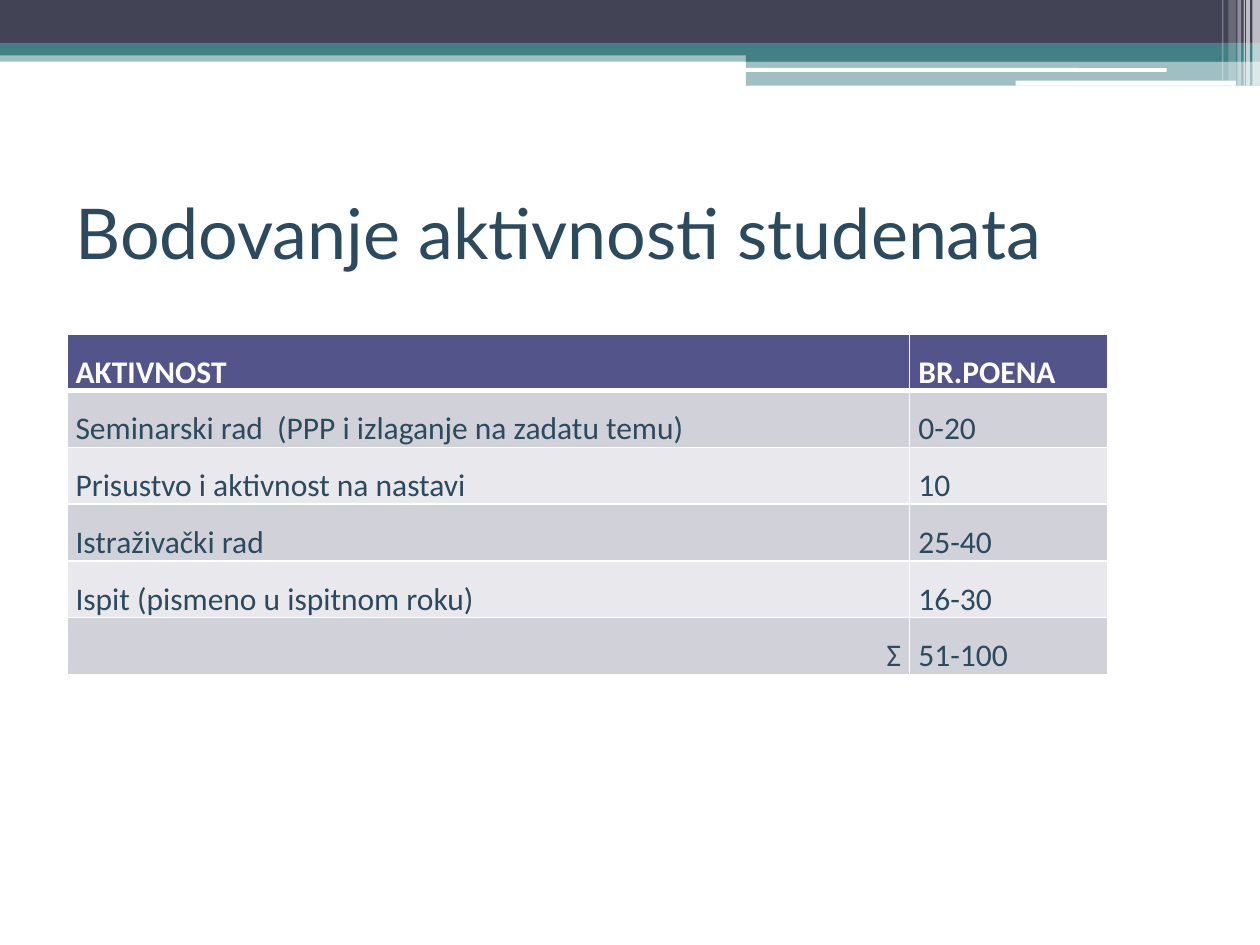
from lxml.etree import SubElement
from pptx import Presentation
from pptx.dml.color import RGBColor
from pptx.enum.shapes import MSO_SHAPE
from pptx.enum.text import MSO_ANCHOR, PP_ALIGN
from pptx.oxml.ns import qn
from pptx.util import Inches, Pt

# Content
TITLE = "Bodovanje aktivnosti studenata"
ROWS = [
    ("AKTIVNOST", "BR.POENA"),
    ("Seminarski rad  (PPP i izlaganje na zadatu temu)", "0-20"),
    ("Prisustvo i aktivnost na nastavi", "10"),
    ("Istraživački rad", "25-40"),
    ("Ispit (pismeno u ispitnom roku)", "16-30"),
    ("Σ", "51-100"),
]
COLORS = {
    "dark": "424456", "teal": "438086", "white": "FFFFFF", "text": "2B4A5E",
    "head": "53548A", "odd": "D1D1DA", "even": "E9E9ED",
}
WIDE, HIGH = 10, 7.5
COLS, ROW = (6.69, 1.57), 0.41
SPLIT = 5.92  # where the right-hand bands begin

# Bands: left, top, width, height, color, opacity in percent
BANDS = [
    (0, 0.4, WIDE, 0.09, "teal", 50),
    (0, 0, WIDE, 0.34, "dark", 100),
    (0, 0.34, WIDE, 0.1, "teal", 100),
    (SPLIT, 0.39, WIDE - SPLIT, 0.1, "teal", 100),
    (SPLIT, 0.48, WIDE - SPLIT, 0.2, "teal", 50),
]
# Rounded bars: left, top, width, height
BARS = [(5.91, 0.54, 3.35, 0.03), (8.06, 0.64, 1.75, 0.04)]
# Upright stripes: left, width, height, opacity in percent
STRIPES = [
    (9.94, 0.06, 0.68, 65), (9.89, 0.03, 0.68, 65), (9.87, 0.01, 0.68, 60),
    (9.82, 0.03, 0.68, 40), (9.75, 0.06, 0.64, 20), (9.7, 0.01, 0.64, 30),
]


def rgb(name):
    return RGBColor.from_string(COLORS[name])


def style(para, name, size, color, bold=False):
    font = para.font
    font.name, font.size, font.bold = name, Pt(size), bold
    font.color.rgb = rgb(color)


def block(slide, kind, box, color, alpha=100):
    shape = slide.shapes.add_shape(kind, *map(Inches, box))
    shape.shadow.inherit = False
    shape.line.fill.background()
    shape.fill.solid()
    shape.fill.fore_color.rgb = rgb(color)
    if alpha < 100:
        tint = shape.fill._xPr.find(qn("a:solidFill"))[0]
        SubElement(tint, qn("a:alpha"), val=str(alpha * 1000))


def border(cell, head):
    props = cell._tc.get_or_add_tcPr()
    for spot, side in enumerate("LRTB"):
        width = 3 if head and side == "B" else 1
        line = SubElement(props, qn(f"a:ln{side}"), w=str(Pt(width)))
        fill = SubElement(line, qn("a:solidFill"))
        SubElement(fill, qn("a:srgbClr"), val=COLORS["white"])
        props.insert(spot, line)


def grid(slide):
    frame = slide.shapes.add_table(
        len(ROWS), len(COLS), Inches(0.53), Inches(2.65),
        Inches(sum(COLS)), Inches(ROW * len(ROWS)))
    table = frame.table
    for col, width in zip(table.columns, COLS):
        col.width = Inches(width)
    for r, row in enumerate(ROWS):
        table.rows[r].height = Inches(ROW)
        head = r == 0
        shade = "head" if head else ("even", "odd")[r % 2]
        for c, text in enumerate(row):
            cell = table.cell(r, c)
            cell.margin_left = cell.margin_right = Inches(0.07)
            cell.margin_top = cell.margin_bottom = 0
            cell.fill.solid()
            cell.fill.fore_color.rgb = rgb(shade)
            border(cell, head)
            cell.text = text
            para = cell.text_frame.paragraphs[0]
            para.line_spacing = 1.5
            if text == "Σ":
                para.alignment = PP_ALIGN.RIGHT
            style(para, "Calibri", 18, "white" if head else "text", head)


def main():
    deck = Presentation()
    deck.slide_width, deck.slide_height = Inches(WIDE), Inches(HIGH)
    slide = deck.slides.add_slide(deck.slide_layouts[6])

    # Top decoration
    for *box, color, alpha in BANDS:
        block(slide, MSO_SHAPE.RECTANGLE, box, color, alpha)
    for box in BARS:
        block(slide, MSO_SHAPE.ROUNDED_RECTANGLE, box, "white")
    for left, width, height, alpha in STRIPES:
        block(slide, MSO_SHAPE.RECTANGLE, (left, 0, width, height), "white", alpha)

    # Title
    box = slide.shapes.add_textbox(*map(Inches, (0.5, 1.25, 9, 1.17)))
    frame = box.text_frame
    frame.word_wrap = True
    frame.vertical_anchor = MSO_ANCHOR.MIDDLE
    frame.text = TITLE
    style(frame.paragraphs[0], "Lato", 40, "text")

    # Points table
    grid(slide)
    deck.save("out.pptx")


if __name__ == "__main__":
    main()
